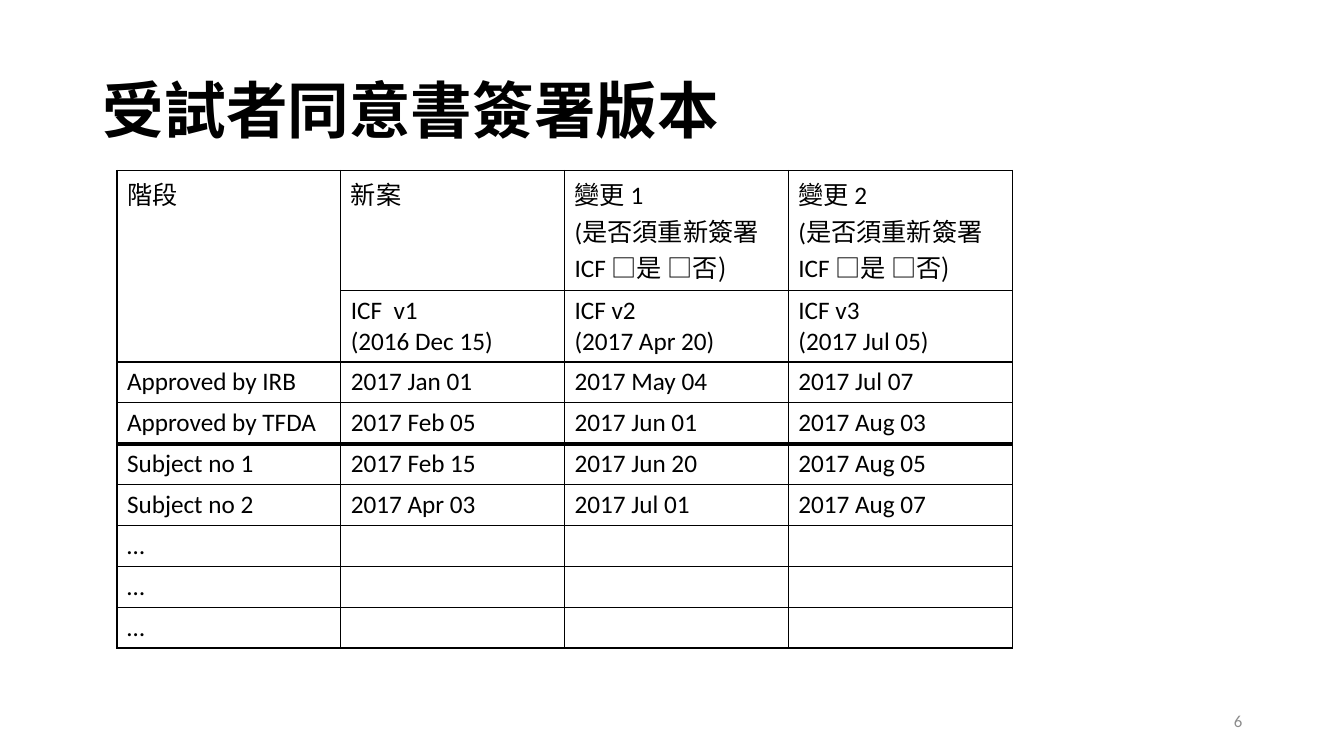
from lxml.etree import SubElement
from pptx import Presentation
from pptx.dml.color import RGBColor
from pptx.enum.text import MSO_ANCHOR, MSO_AUTO_SIZE, PP_ALIGN
from pptx.oxml.ns import qn
from pptx.util import Inches, Pt

COLORS = {"ink": "000000", "paper": "FFFFFF", "page number": "8C8C8C"}
LATIN, CHINESE, CHECKBOX = "Calibri", "Noto Sans CJK SC", "Noto Sans CJK KR"

QUESTION = ("(是否須重新簽署ICF ", "□是 □否)")
# Each cell is a list of paragraphs; a tuple holds plain and checkbox text
ROWS = [
    [["階段"], ["新案"], ["變更 1", QUESTION], ["變更 2", QUESTION]],
    [[], ["ICF  v1", "(2016 Dec 15)"], ["ICF v2", "(2017 Apr 20)"],
     ["ICF v3", "(2017 Jul 05)"]],
    [["Approved by IRB"], ["2017 Jan 01"], ["2017 May 04"], ["2017 Jul 07"]],
    [["Approved by TFDA"], ["2017 Feb 05"], ["2017 Jun 01"], ["2017 Aug 03"]],
    [["Subject no 1"], ["2017 Feb 15"], ["2017 Jun 20"], ["2017 Aug 05"]],
    [["Subject no 2"], ["2017 Apr 03"], ["2017 Jul 01"], ["2017 Aug 07"]],
] + [[["…"], [], [], []]] * 3
ROW_HEIGHTS = [1.19, 0.71] + [0.405] * 7
COLUMN_WIDTH = 2.22
LAST_APPROVAL_ROW = 3


def set_typeface(font, latin, east_asian):
    font.name = latin
    SubElement(font._element, qn("a:ea")).set("typeface", east_asian)


def style_font(font, size, color, latin=LATIN, east_asian=CHINESE, bold=False):
    font.size = Pt(size)
    font.bold = bold
    font.color.rgb = RGBColor.from_string(COLORS[color])
    set_typeface(font, latin, east_asian)


def set_borders(cell, widths):
    properties = cell._tc.get_or_add_tcPr()
    for index, (side, width) in enumerate(widths.items()):
        line = properties.makeelement(qn(f"a:ln{side}"), {"w": str(Pt(width))})
        fill = SubElement(line, qn("a:solidFill"))
        SubElement(fill, qn("a:srgbClr")).set("val", COLORS["ink"])
        properties.insert(index, line)


def fill_cell(cell, paragraphs):
    frame = cell.text_frame
    for index, content in enumerate(paragraphs):
        para = frame.add_paragraph() if index else frame.paragraphs[0]
        style_font(para.font, 18, "ink")
        plain, *checkboxes = content if isinstance(content, tuple) else (content,)
        para.add_run().text = plain
        for text in checkboxes:
            span = para.add_run()
            span.text = text
            set_typeface(span.font, CHECKBOX, CHECKBOX)


def add_title(page, text):
    title = page.shapes.title
    title.left, title.top = Inches(0.92), Inches(0.4)
    title.width, title.height = Inches(11.5), Inches(1.45)
    frame = title.text_frame
    frame.text = text
    frame.auto_size = MSO_AUTO_SIZE.NONE
    frame.vertical_anchor = MSO_ANCHOR.MIDDLE
    para = frame.paragraphs[0]
    para.alignment = PP_ALIGN.LEFT
    para.line_spacing = 0.9
    style_font(para.font, 44, "ink", CHINESE, bold=True)


def add_version_table(page):
    columns = len(ROWS[0])
    table = page.shapes.add_table(
        len(ROWS), columns, Inches(1.16), Inches(1.69),
        Inches(COLUMN_WIDTH * columns), Inches(sum(ROW_HEIGHTS))).table
    table.first_row = table.horz_banding = False
    for column in table.columns:
        column.width = Inches(COLUMN_WIDTH)
    for row, height in zip(table.rows, ROW_HEIGHTS):
        row.height = Inches(height)
    table.cell(0, 0).merge(table.cell(1, 0))

    for row_index, row in enumerate(ROWS):
        # A heavy rule separates the approvals from the subjects
        top = 3 if row_index == LAST_APPROVAL_ROW + 1 else 1
        bottom = 3 if row_index == LAST_APPROVAL_ROW else 1
        for column_index, paragraphs in enumerate(row):
            cell = table.cell(row_index, column_index)
            cell.fill.solid()
            cell.fill.fore_color.rgb = RGBColor.from_string(COLORS["paper"])
            set_borders(cell, {"L": 1, "R": 1, "T": top, "B": bottom})
            fill_cell(cell, paragraphs)


def add_page_number(page, number):
    box = page.shapes.add_textbox(Inches(9.42), Inches(6.95), Inches(3), Inches(0.4))
    frame = box.text_frame
    frame.word_wrap = True
    frame.vertical_anchor = MSO_ANCHOR.MIDDLE
    frame.text = number
    para = frame.paragraphs[0]
    para.alignment = PP_ALIGN.RIGHT
    style_font(para.font, 12, "page number")


def main():
    deck = Presentation()
    deck.slide_width, deck.slide_height = Inches(13.33), Inches(7.5)
    page = deck.slides.add_slide(deck.slide_layouts.get_by_name("Title Only"))
    add_title(page, "受試者同意書簽署版本")
    add_version_table(page)
    add_page_number(page, "6")
    deck.save("out.pptx")


if __name__ == "__main__":
    main()
